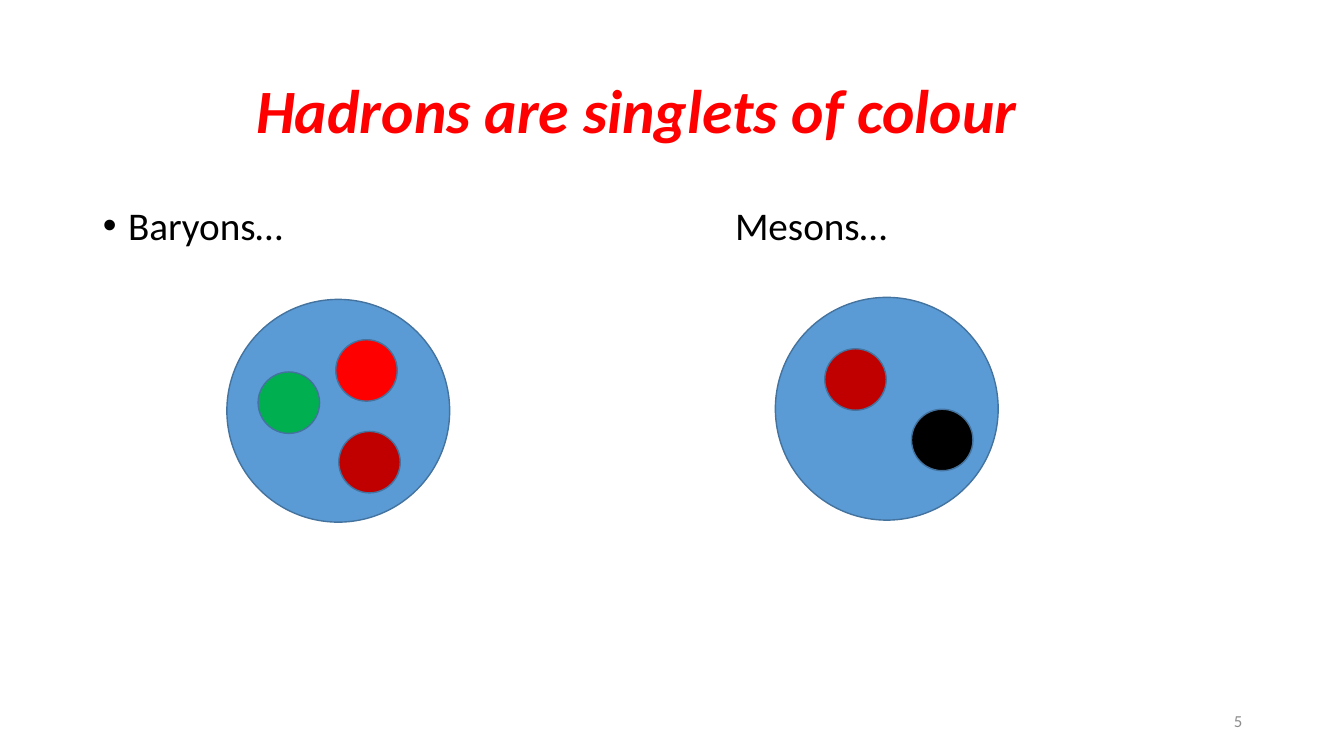
"""Build the slide on hadrons as colour singlets."""
from lxml import etree
from pptx import Presentation
from pptx import util as u
from pptx.dml.color import RGBColor
from pptx.enum import shapes, text
from pptx.oxml import ns

PX = 9144
RED = RGBColor(0xFF, 0x00, 0x00)
DARK_RED = RGBColor(0xC0, 0x00, 0x00)
GREEN = RGBColor(0x00, 0xB0, 0x50)
BLACK = RGBColor(0x00, 0x00, 0x00)
GREY = RGBColor(0x8C, 0x8C, 0x8C)
HADRON_BLUE = RGBColor(0x5B, 0x9B, 0xD5)
OUTLINE = RGBColor(0x43, 0x73, 0x9E)

HADRON_SIZE = 221
QUARK_SIZE = 61
HADRONS = [
    (225, 297, [(336, 428, DARK_RED), (256, 369, GREEN), (333, 337, RED)]),
    (769, 295, [(818, 346, DARK_RED), (904, 406, BLACK)]),
]


def px(length):
    """Turn a length in px into EMU."""
    return u.Emu(length * PX)


def place(box, left, top, width, height):
    """Move and size a placeholder."""
    box.left, box.top, box.width, box.height = map(px, (left, top, width, height))


def write(box, wording, size, color, align, anchor):
    """Fill a box with one formatted paragraph and return it."""
    frame = box.text_frame
    frame.word_wrap = True
    frame.auto_size = text.MSO_AUTO_SIZE.NONE
    frame.vertical_anchor = anchor
    frame.text = wording
    paragraph = frame.paragraphs[0]
    paragraph.alignment = align
    for run in paragraph.runs:
        run.font.name = "Calibri"
        run.font.size = u.Pt(size)
        run.font.color.rgb = color
    return paragraph


def indent(paragraph, left, first):
    """Set the left margin and first-line indent, and return the properties."""
    properties = paragraph._p.get_or_add_pPr()
    properties.set("marL", str(px(left)))
    properties.set("indent", str(px(first)))
    return properties


def add_bullet_and_tab(properties, position):
    """Give a paragraph a round bullet and one left tab stop."""
    font = etree.SubElement(properties, ns.qn("a:buFont"))
    font.set("typeface", "Arial")
    bullet = etree.SubElement(properties, ns.qn("a:buChar"))
    bullet.set("char", "•")
    stops = etree.SubElement(properties, ns.qn("a:tabLst"))
    stop = etree.SubElement(stops, ns.qn("a:tab"))
    stop.set("pos", str(px(position)))
    stop.set("algn", "l")


def add_disc(slide, left, top, size, color):
    """Draw an outlined circle."""
    disc = slide.shapes.add_shape(
        shapes.MSO_SHAPE.OVAL, px(left), px(top), px(size), px(size))
    disc.shadow.inherit = False
    disc.fill.solid()
    disc.fill.fore_color.rgb = color
    disc.line.color.rgb = OUTLINE
    disc.line.width = u.Pt(1)


def main():
    """Build and save the slide."""
    deck = Presentation()
    deck.slide_width, deck.slide_height = px(1333), px(750)
    slide = deck.slides.add_slide(deck.slide_layouts[1])
    title, body = slide.placeholders

    place(title, 92, 40, 1150, 145)
    heading = write(title, "Hadrons are singlets of colour", 44, RED,
                    text.PP_ALIGN.LEFT, text.MSO_ANCHOR.MIDDLE)
    indent(heading, 152, 0)
    heading.line_spacing = 0.9
    heading.runs[0].font.bold = True
    heading.runs[0].font.italic = True

    place(body, 92, 200, 1150, 476)
    families = write(body, "Baryons…\tMesons…", 28, BLACK,
                     text.PP_ALIGN.LEFT, text.MSO_ANCHOR.TOP)
    families.line_spacing = 0.9
    families.space_before = u.Pt(0)
    add_bullet_and_tab(indent(families, 25, -25), 627)

    for left, top, _ in HADRONS:
        add_disc(slide, left, top, HADRON_SIZE, HADRON_BLUE)
    for _, _, quarks in HADRONS:
        for left, top, color in quarks:
            add_disc(slide, left, top, QUARK_SIZE, color)

    number = slide.shapes.add_textbox(px(942), px(695), px(300), px(40))
    write(number, "5", 12, GREY, text.PP_ALIGN.RIGHT, text.MSO_ANCHOR.MIDDLE)
    deck.save("out.pptx")


if __name__ == "__main__":
    main()
